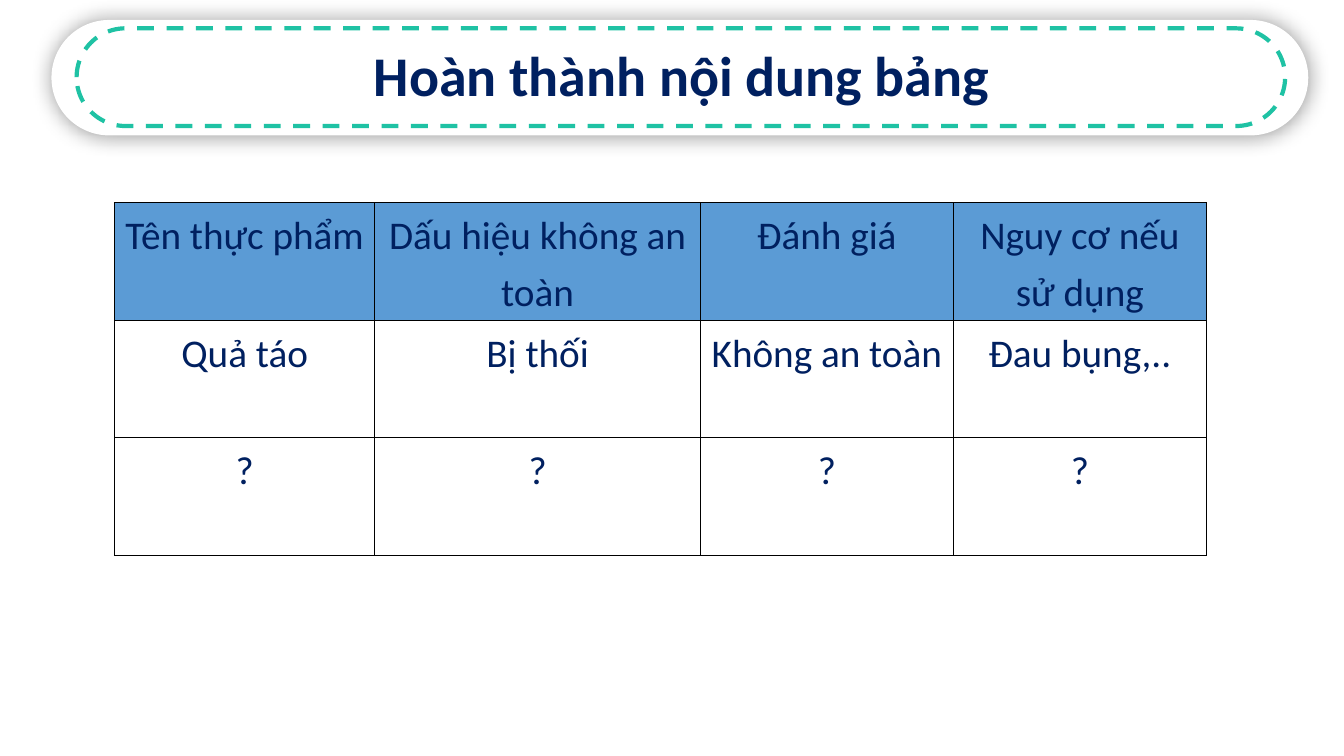
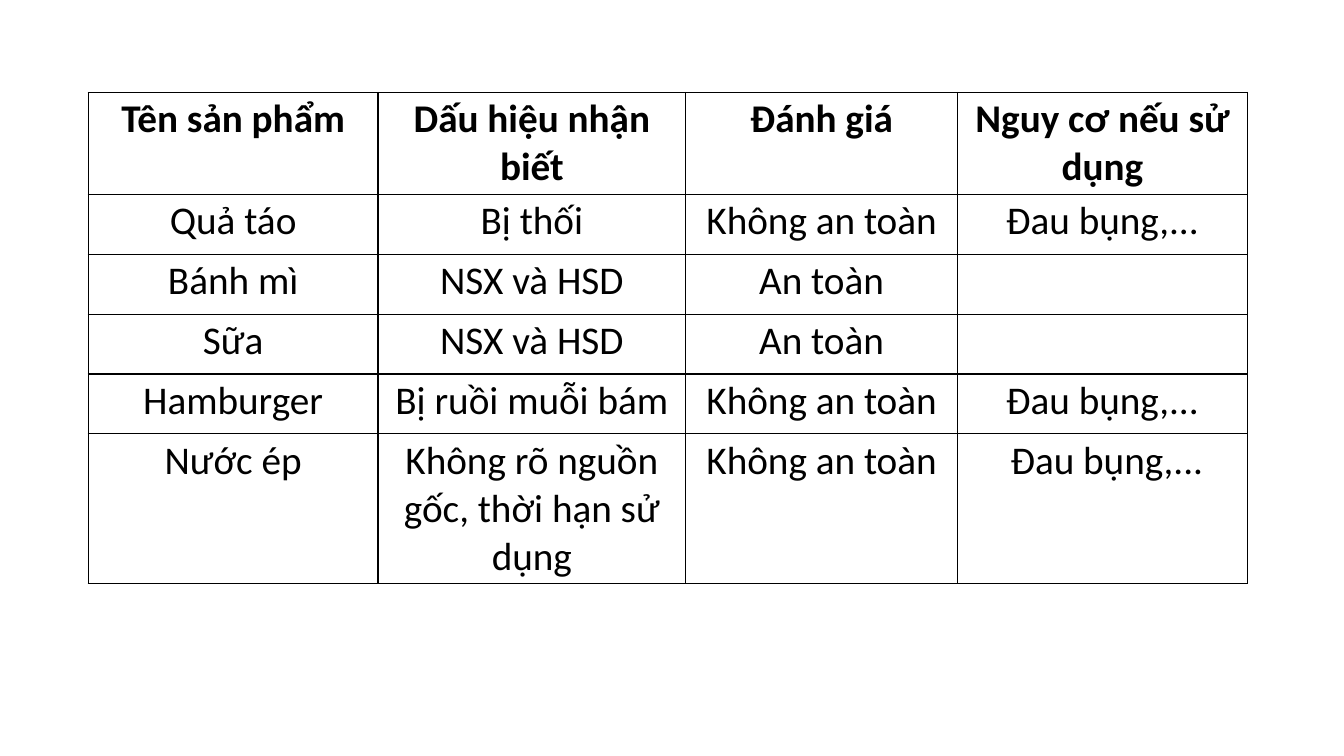
import pptx
import pptx.util
import pptx.dml.color
import pptx.enum.dml
import pptx.enum.shapes
import pptx.enum.text
import pptx.oxml

PX = 9525
FONT = "Calibri"
COLORS = {
    "navy": "002060",
    "teal": "1FC2A4",
    "header": "5B9BD5",
    "white": "FFFFFF",
    "black": "000000",
}
NAMESPACE = "http://schemas.openxmlformats.org/drawingml/2006/main"


def style_paragraph(paragraph, size, color, bold):
    paragraph.alignment = pptx.enum.text.PP_ALIGN.CENTER
    paragraph.font.name = FONT
    paragraph.font.size = pptx.util.Pt(size)
    paragraph.font.bold = bold
    paragraph.font.color.rgb = pptx.dml.color.RGBColor.from_string(COLORS[color])


presentation = pptx.Presentation()
presentation.slide_width = 1280 * PX
presentation.slide_height = 720 * PX
title_layout = presentation.slide_layouts[5]
blank_layout = presentation.slide_layouts[6]

slide = presentation.slides.add_slide(title_layout)
banner = [
    {"box": (49, 19, 1197, 110), "fill": "white", "line": None},
    {"box": (73, 27, 1151, 93), "fill": None, "line": "teal"},
]
for part in banner:
    shape = slide.shapes.add_shape(
        pptx.enum.shapes.MSO_SHAPE.ROUNDED_RECTANGLE, *[length * PX for length in part["box"]]
    )
    shape.adjustments[0] = 0.5
    shape.shadow.inherit = False
    if part["fill"]:
        shape.fill.solid()
        shape.fill.fore_color.rgb = pptx.dml.color.RGBColor.from_string(COLORS[part["fill"]])
    else:
        shape.fill.background()
    if part["line"]:
        shape.line.color.rgb = pptx.dml.color.RGBColor.from_string(COLORS[part["line"]])
        shape.line.width = pptx.util.Pt(3)
        shape.line.dash_style = pptx.enum.dml.MSO_LINE.DASH
    else:
        shape.line.fill.background()
        effects = shape.element.spPr.find(f"{{{NAMESPACE}}}effectLst")
        effects.append(pptx.oxml.parse_xml(
            f'<a:outerShdw xmlns:a="{NAMESPACE}" blurRad="{pptx.util.Pt(15)}" dist="0" dir="0" algn="ctr">'
            f'<a:srgbClr val="{COLORS["black"]}"><a:alpha val="40000"/></a:srgbClr></a:outerShdw>'
        ))

title = slide.shapes.title
title.left, title.top, title.width, title.height = [length * PX for length in (116, 34, 1066, 74)]
title.text_frame.text = "Hoàn thành nội dung bảng"
title.text_frame.vertical_anchor = pptx.enum.text.MSO_ANCHOR.MIDDLE
style_paragraph(title.text_frame.paragraphs[0], 40, "navy", True)
slide.shapes.element.append(title.element)

tables = [
    {
        "slide": slide,
        "origin": (109, 193),
        "columns": [248, 310, 241, 241],
        "rows": [112, 112, 112],
        "margins": (7, 0),
        "line_spacing": 1.2,
        "color": "navy",
        "header_fill": "header",
        "header_bold": False,
        "cells": [
            ["Tên thực phẩm", "Dấu hiệu không an toàn", "Đánh giá", "Nguy cơ nếu sử dụng"],
            ["Quả táo", "Bị thối", "Không an toàn", "Đau bụng,.."],
            ["?"] * 4,
        ],
    },
    {
        "slide": presentation.slides.add_slide(blank_layout),
        "origin": (84, 88),
        "columns": [276, 293, 259, 276],
        "rows": [96, 57, 57, 57, 57, 142],
        "margins": (3, 3),
        "line_spacing": 1.0,
        "color": "black",
        "header_fill": "white",
        "header_bold": True,
        "cells": [
            ["Tên sản phẩm", "Dấu hiệu nhận biết", "Đánh giá", "Nguy cơ nếu sử dụng"],
            ["Quả táo", "Bị thối", "Không an toàn", "Đau bụng,..."],
            ["Bánh mì", "NSX và HSD", "An toàn", ""],
            ["Sữa", "NSX và HSD", "An toàn", ""],
            ["Hamburger", "Bị ruồi muỗi bám", "Không an toàn", "Đau bụng,..."],
            ["Nước ép", "Không rõ nguồn gốc, thời hạn sử dụng", "Không an toàn", " Đau bụng,..."],
        ],
    },
]

for data in tables:
    left, top = data["origin"]
    table = data["slide"].shapes.add_table(
        len(data["rows"]), len(data["columns"]),
        left * PX, top * PX, sum(data["columns"]) * PX, sum(data["rows"]) * PX,
    ).table
    for column, width in zip(table.columns, data["columns"]):
        column.width = width * PX
    for row_index, (row, height) in enumerate(zip(table.rows, data["rows"])):
        row.height = height * PX
        is_header = row_index == 0
        fill = data["header_fill"] if is_header else "white"
        for cell, text in zip(row.cells, data["cells"][row_index]):
            cell.text = text
            cell.margin_left = cell.margin_right = data["margins"][0] * PX
            cell.margin_top = cell.margin_bottom = data["margins"][1] * PX
            paragraph = cell.text_frame.paragraphs[0]
            paragraph.line_spacing = data["line_spacing"]
            style_paragraph(paragraph, 28, data["color"], is_header and data["header_bold"])
            cell.fill.solid()
            cell.fill.fore_color.rgb = pptx.dml.color.RGBColor.from_string(COLORS[fill])
            properties = cell.fill._xPr
            for index, side in enumerate(("lnL", "lnR", "lnT", "lnB")):
                properties.insert(index, pptx.oxml.parse_xml(
                    f'<a:{side} xmlns:a="{NAMESPACE}" w="{pptx.util.Pt(1)}"><a:solidFill>'
                    f'<a:srgbClr val="{COLORS["black"]}"/></a:solidFill></a:{side}>'
                ))

presentation.save("out.pptx")
